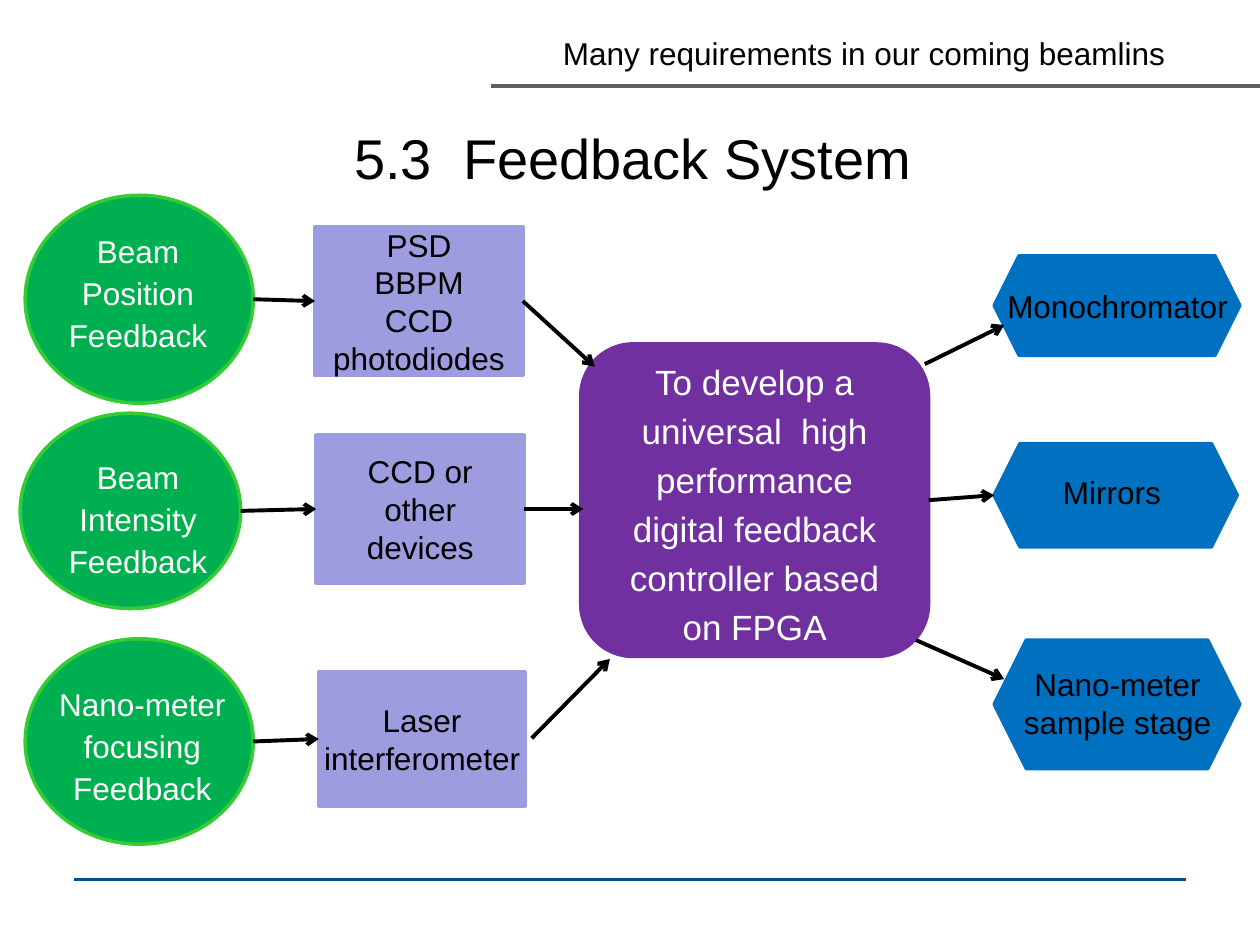
from lxml import etree
from pptx import Presentation
from pptx import util as u
from pptx.dml.color import RGBColor
from pptx.enum import shapes, text
from pptx.oxml import ns

BLACK = RGBColor(0x00, 0x00, 0x00)
WHITE = RGBColor(0xFF, 0xFF, 0xFF)
GREY = RGBColor(0x5F, 0x5F, 0x5F)
NAVY = RGBColor(0x00, 0x50, 0x88)
PURPLE = RGBColor(0x70, 0x30, 0xA0)
GREEN = RGBColor(0x00, 0xB0, 0x50)
LIME = RGBColor(0x33, 0xCC, 0x33)
LILAC = RGBColor(0x9C, 0x9C, 0xDF)
BLUE = RGBColor(0x00, 0x70, 0xC0)
KIND = shapes.MSO_SHAPE
LEFT, RIGHT = 1, 3


class Deck:
    font = "Arial"
    size = 18
    edge = 2
    rule = 2.25

    def __init__(self, slide):
        self.slide = slide

    def letter(self, shape, words, color=BLACK, size=None, pitch=None,
               pad=None, align=text.PP_ALIGN.CENTER):
        frame = shape.text_frame
        frame.word_wrap = True
        frame.vertical_anchor = text.MSO_ANCHOR.MIDDLE
        if pad is not None:
            frame.margin_left = frame.margin_right = u.Inches(pad)
        frame.text = words
        for para in frame.paragraphs:
            para.alignment = align
            if pitch:
                para.line_spacing = u.Pt(pitch)
            for run in para.runs:
                run.font.name = self.font
                run.font.size = u.Pt(size or self.size)
                run.font.color.rgb = color

    def label(self, box, words, **style):
        shape = self.slide.shapes.add_textbox(*map(u.Inches, box))
        frame = shape.text_frame
        frame.margin_top = frame.margin_bottom = 0
        self.letter(shape, words, **{"pad": 0, **style})
        return shape

    def block(self, kind, box, fill, edge=None):
        shape = self.slide.shapes.add_shape(kind, *map(u.Inches, box))
        shape.shadow.inherit = False
        shape.fill.solid()
        shape.fill.fore_color.rgb = fill
        shape.line.color.rgb = edge or fill
        shape.line.width = u.Pt(self.edge)
        return shape

    def line(self, start, end, color):
        link = self.slide.shapes.add_connector(
            shapes.MSO_CONNECTOR.STRAIGHT, *map(u.Inches, start + end))
        link.line.color.rgb = color
        link.line.width = u.Pt(self.rule)
        etree.SubElement(link._element.spPr, ns.qn("a:effectLst"))
        return link

    def arrow(self, start, end, source=None, target=None):
        link = self.line(start, end, BLACK)
        stroke = link._element.spPr.find(ns.qn("a:ln"))
        etree.SubElement(stroke, ns.qn("a:tailEnd")).set("type", "arrow")
        if source is not None:
            link.begin_connect(source, RIGHT)
        if target is not None:
            link.end_connect(target, LEFT)


def main():
    prs = Presentation()
    prs.slide_width, prs.slide_height = u.Inches(10), u.Inches(7.5)
    deck = Deck(prs.slides.add_slide(prs.slide_layouts[6]))

    # Rules, header and title
    deck.line((3.9, 0.68), (10, 0.68), GREY)
    deck.line((0.59, 6.98), (9.41, 6.98), NAVY)
    head = deck.label((4.37, 0.22, 5.03, 0.4),
                      "Many requirements in our coming beamlins",
                      pad=0.1, align=text.PP_ALIGN.LEFT)
    head.text_frame.word_wrap = False
    deck.label((0.72, 0.84, 8.61, 0.81), "5.3  Feedback System", size=32)

    # Controller
    core = deck.block(KIND.ROUNDED_RECTANGLE, (4.61, 2.73, 2.76, 2.48), PURPLE)
    deck.letter(core, "To develop a universal  high performance digital "
                "feedback controller based on FPGA", WHITE, 20, 28)

    # Feedback loops: oval, its label, and the sensor it leads to
    loops = [
        ((0.2, 1.55, 1.81, 1.65), (0.47, 1.8, 1.25, 1.02),
         "Beam\nPosition\nFeedback",
         (2.5, 1.8, 1.65, 1.18), "PSD\nBBPM\nCCD\nphotodiodes", None),
        ((0.16, 3.28, 1.75, 1.55), (0.47, 3.59, 1.25, 1.02),
         "Beam\nIntensity\nFeedback",
         (2.51, 3.45, 1.65, 1.18), "CCD or other devices", None),
        ((0.2, 5.07, 1.81, 1.63), (0.31, 5.39, 1.64, 1.02),
         "Nano-meter focusing\nFeedback",
         (2.53, 5.33, 1.64, 1.07), "Laser interferometer", 0),
    ]
    boxes = []
    for oval, area, name, place, parts, pad in loops:
        deck.block(KIND.OVAL, oval, GREEN, LIME)
        deck.label(area, name, color=WHITE, pitch=24)
        box = deck.block(KIND.RECTANGLE, place, LILAC)
        deck.letter(box, parts, pad=pad)
        boxes.append(box)
        x, y, w, h = oval
        mid = y + h / 2
        deck.arrow((x + w, mid), (place[0], mid), target=box)

    # Sensors to controller
    deck.arrow((4.15, 2.39), (4.72, 2.91), source=boxes[0])
    deck.arrow((4.16, 4.04), (4.63, 4.04), source=boxes[1])
    deck.arrow((4.22, 5.86), (4.84, 5.23))

    # Driven devices
    goals = [
        ((7.89, 2.03, 1.95, 0.79), (7.97, 2.27, 1.8, 0.31), "Monochromator"),
        ((7.89, 3.52, 1.93, 0.82), (8.2, 3.67, 1.25, 0.47), "Mirrors"),
        ((7.89, 5.08, 1.95, 1.02), (8.05, 5.23, 1.64, 0.7),
         "Nano-meter sample stage"),
    ]
    for place, area, name in goals:
        deck.block(KIND.HEXAGON, place, BLUE)
        deck.label(area, name)

    # Controller to devices
    deck.arrow((7.34, 2.89), (7.97, 2.58))
    deck.arrow((7.37, 3.97), (7.89, 3.93), source=core)
    deck.arrow((7.27, 5.08), (7.97, 5.39))

    prs.save("out.pptx")


if __name__ == "__main__":
    main()
